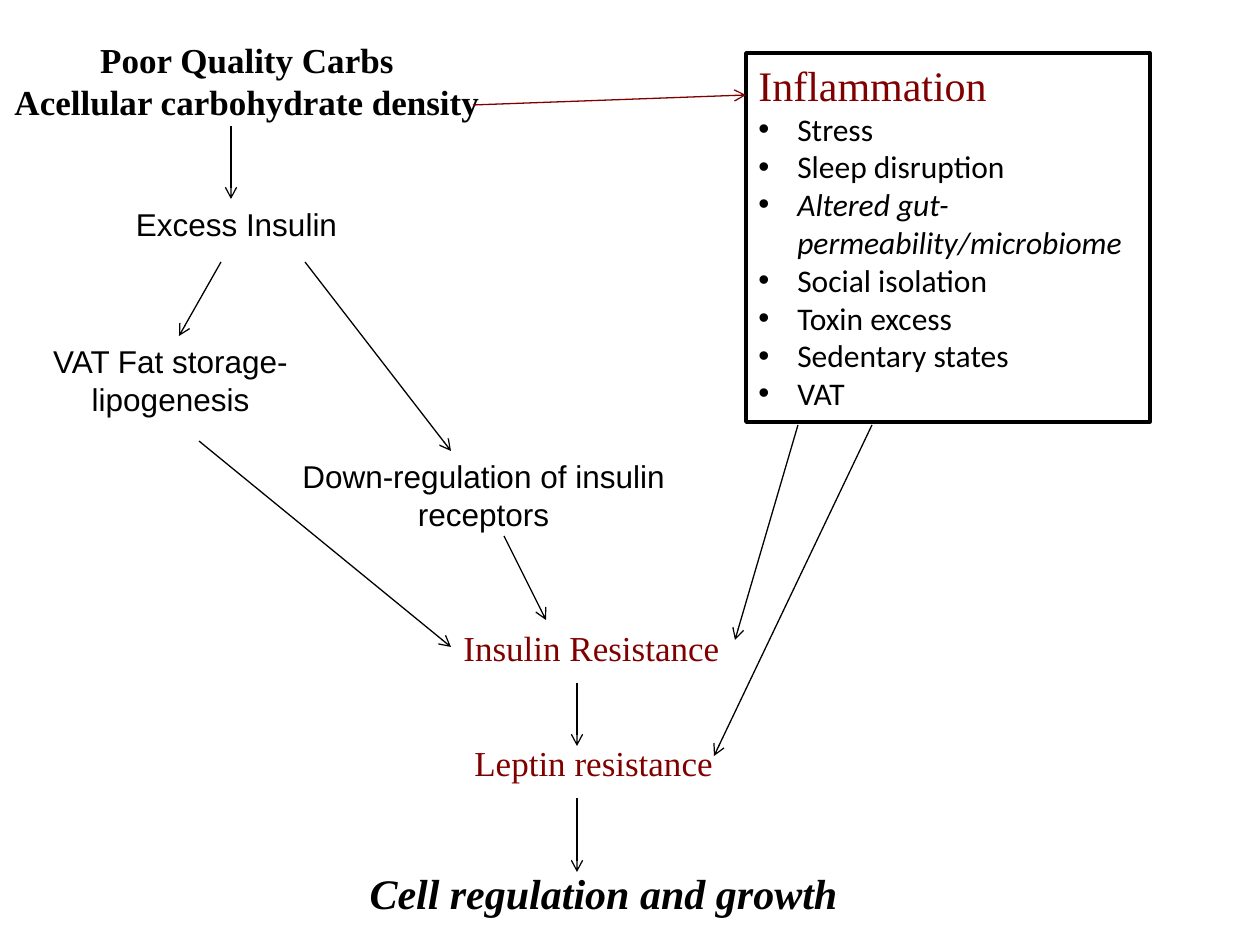
from lxml import etree
from pptx import Presentation
from pptx.dml.color import RGBColor
from pptx.enum import shapes, text
from pptx.oxml import ns
from pptx import util as u

EMU_PER_PX = 914400 / 126
BLACK = RGBColor(0x00, 0x00, 0x00)
WHITE = RGBColor(0xFF, 0xFF, 0xFF)
MAROON = RGBColor(0x80, 0x00, 0x00)

CAUSE = {"name": "Times New Roman", "size": u.Pt(20), "bold": True}
STEP = {"name": "Arial", "size": u.Pt(18)}
RESISTANCE = {"name": "Times New Roman", "size": u.Pt(20), "color": MAROON}
OUTCOME = {"name": "Times New Roman", "size": u.Pt(24), "bold": True, "italic": True}
BOX_HEADING = {"name": "Times New Roman", "size": u.Pt(24), "color": MAROON}
BOX_ITEM = {"name": "Calibri", "size": u.Pt(18)}

LEFT = text.PP_ALIGN.LEFT
CENTER = text.PP_ALIGN.CENTER


def px(length):
    return u.Emu(round(length * EMU_PER_PX))


class Diagram:
    bullet_indent = 39
    arrow_width = u.Pt(0.75)
    box_line_width = u.Pt(2)

    def __init__(self, slide):
        self.slide = slide

    def format_font(self, font, style):
        values = {"color": BLACK, **style}
        font.color.rgb = values.pop("color")
        for name, value in values.items():
            setattr(font, name, value)

    def prepare_frame(self, shape):
        frame = shape.text_frame
        settings = {
            "word_wrap": True,
            "auto_size": text.MSO_AUTO_SIZE.SHAPE_TO_FIT_TEXT,
            "vertical_anchor": text.MSO_ANCHOR.TOP,
        }
        for name, value in settings.items():
            setattr(frame, name, value)
        return frame

    def fill_paragraph(self, paragraph, wording, style, alignment=LEFT):
        paragraph.alignment = alignment
        run = paragraph.add_run()
        run.text = wording
        self.format_font(run.font, style)

    def label(self, bounds, lines, style, alignment=CENTER):
        shape = self.slide.shapes.add_textbox(*map(px, bounds))
        frame = self.prepare_frame(shape)
        for index, line in enumerate(lines):
            paragraph = frame.add_paragraph() if index else frame.paragraphs[0]
            self.fill_paragraph(paragraph, line, style, alignment)

    def bullet(self, paragraph):
        properties = paragraph._p.get_or_add_pPr()
        properties.set("marL", str(px(self.bullet_indent)))
        properties.set("indent", str(px(-self.bullet_indent)))
        font = etree.SubElement(properties, ns.qn("a:buFont"))
        font.set("typeface", "Arial")
        character = etree.SubElement(properties, ns.qn("a:buChar"))
        character.set("char", "•")

    def list_box(self, bounds, heading, items):
        shape = self.slide.shapes.add_shape(
            shapes.MSO_SHAPE.RECTANGLE, *map(px, bounds))
        shape.shadow.inherit = False
        shape.fill.solid()
        shape.fill.fore_color.rgb = WHITE
        shape.line.color.rgb = BLACK
        shape.line.width = self.box_line_width
        frame = self.prepare_frame(shape)
        self.fill_paragraph(frame.paragraphs[0], heading, BOX_HEADING)
        for item, italic in items:
            paragraph = frame.add_paragraph()
            self.bullet(paragraph)
            self.fill_paragraph(paragraph, item, {**BOX_ITEM, "italic": italic})

    def arrow(self, start, end, color=BLACK):
        connector = self.slide.shapes.add_connector(
            shapes.MSO_CONNECTOR.STRAIGHT, *map(px, start + end))
        connector.line.color.rgb = color
        connector.line.width = self.arrow_width
        properties = connector._element.spPr
        tail = etree.SubElement(properties.find(ns.qn("a:ln")), ns.qn("a:tailEnd"))
        tail.set("type", "arrow")
        etree.SubElement(properties, ns.qn("a:effectLst"))


def main():
    presentation = Presentation()
    presentation.slide_width = px(1260)
    presentation.slide_height = px(945)
    diagram = Diagram(presentation.slides.add_slide(presentation.slide_layouts[6]))

    diagram.label((0, 32, 494, 97),
                  ["Poor Quality Carbs", "Acellular carbohydrate density"], CAUSE)
    diagram.label((95, 199, 283, 50), ["Excess Insulin"], STEP)
    diagram.label((284, 451, 399, 89), ["Down-regulation of insulin receptors"], STEP)
    diagram.label((451, 620, 315, 55), ["Insulin Resistance"], RESISTANCE, LEFT)
    diagram.list_box((746, 53, 404, 369), "Inflammation", [
        ("Stress", False),
        ("Sleep disruption", False),
        ("Altered gut-permeability/microbiome", True),
        ("Social isolation", False),
        ("Toxin excess", False),
        ("Sedentary states", False),
        ("VAT", False),
    ])
    diagram.label((5, 336, 331, 89), ["VAT Fat storage-lipogenesis"], STEP)
    diagram.label((462, 735, 336, 55), ["Leptin resistance"], RESISTANCE, LEFT)
    diagram.label((336, 861, 535, 64), ["Cell regulation and growth"], OUTCOME)

    for start, end in [
        ((231, 126), (231, 199)),
        ((221, 262), (179, 336)),
        ((504, 536), (546, 620)),
        ((798, 425), (735, 640)),
        ((199, 441), (451, 647)),
        ((577, 683), (577, 746)),
        ((577, 798), (577, 872)),
        ((305, 262), (451, 451)),
        ((872, 425), (714, 756)),
    ]:
        diagram.arrow(start, end)
    diagram.arrow((473, 105), (746, 95), MAROON)

    presentation.save("out.pptx")


if __name__ == "__main__":
    main()
